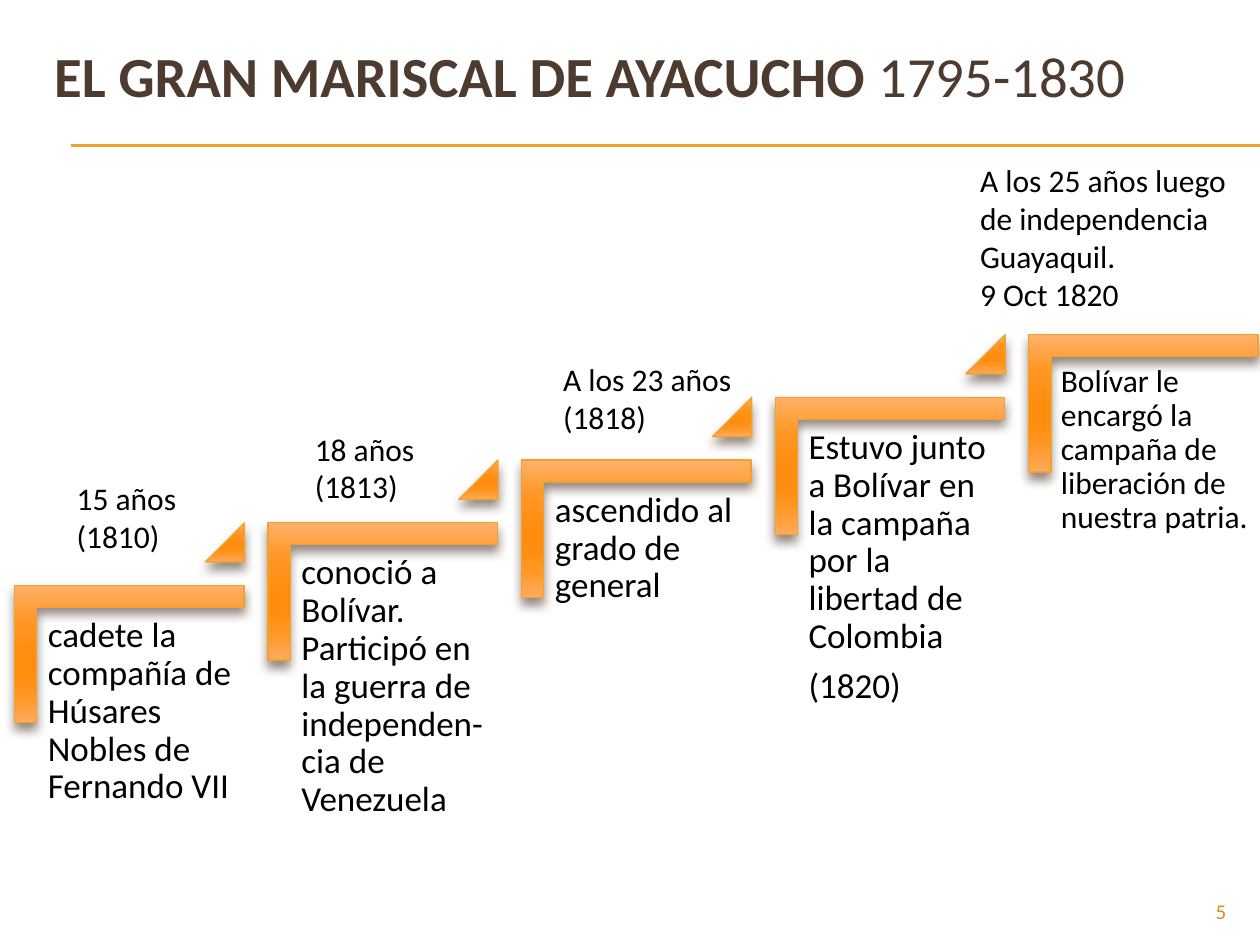
from lxml import etree
from pptx import Presentation
from pptx import util as u
from pptx.dml.color import RGBColor
from pptx.enum import shapes, text
from pptx.oxml import parse_xml
from pptx.oxml.ns import qn

W, H = 10, 7.5
INK = {"title": "4E3B30", "body": "000000", "rule": "F0A22E", "page": "D48F29"}
GRAD = [(0, "FFB16A"), (25, "FF9826"), (50, "FF8D0F"),
        (65, "FF8D0F"), (80, "FF9724"), (100, "FFAA5C")]
TITLE = [("EL GRAN MARISCAL DE AYACUCHO ", True), ("1795-1830", False)]
STEPS = [
    (["cadete la compañía de Húsares Nobles de Fernando VII"], 20, 0.08),
    (["conoció a Bolívar. Participó en la guerra de independen-cia de Venezuela"], 20, 0.08),
    (["ascendido al grado de general"], 20, 0.08),
    (["Estuvo junto a Bolívar en la campaña por la libertad de Colombia", "(1820)"], 20, 0.08),
    (["Bolívar le encargó la campaña de liberación de nuestra patria."], 18, 0.07),
]
DATES = [
    (["15 años", "(1810)"], (0.51, 3.75, 1, 0.71), False),
    (["18 años", "(1813)"], (2.4, 3.36, 1, 0.71), False),
    (["A los 23 años", "(1818)"], (4.37, 2.81, 1.55, 0.71), False),
    (["A los 25 años luego", "de independencia", "Guayaquil.", "9 Oct 1820"],
     (7.68, 1.23, 2.57, 1.31), True),
]
DX, DY = (8.35 - 0.3) / 4, (2.83 - 4.82) / 4
NS = 'xmlns:a="http://schemas.openxmlformats.org/drawingml/2006/main"'

deck = Presentation()
deck.slide_width, deck.slide_height = u.Inches(W), u.Inches(H)
slide = deck.slides.add_slide(deck.slide_layouts[5])


def inch(*nums):
    return [u.Inches(n) for n in nums]


def write(box, paras, size, ink="body", align="LEFT", wrap=True, pad=None, space=None, after=0):
    frame = box.text_frame
    frame.word_wrap = wrap
    if pad is not None:
        frame.margin_left = frame.margin_right = u.Inches(pad)
        frame.margin_top = frame.margin_bottom = u.Inches(pad)
    for n, runs in enumerate(paras):
        para = frame.add_paragraph() if n else frame.paragraphs[0]
        para.alignment = getattr(text.PP_ALIGN, align)
        para.space_after = u.Pt(after)
        if space:
            para.line_spacing = space
        for words, bold in [(runs, False)] if isinstance(runs, str) else runs:
            run = para.add_run()
            run.text = words
            font = run.font
            font.name, font.size, font.bold = "Calibri", u.Pt(size), bold
            font.color.rgb = RGBColor.from_string(INK[ink])
    return frame


def label(paras, spot, size, **style):
    return write(slide.shapes.add_textbox(*inch(*spot)), paras, size, **style)


def glow(kind, spot, adjust, turn=0):
    item = slide.shapes.add_shape(kind, *inch(*spot))
    item.rotation = turn
    for n, share in enumerate(adjust):
        item.adjustments[n] = share
    item.line.color.rgb = RGBColor.from_string(INK["rule"])
    item.line.width = u.Pt(0.79)
    stops = "".join(f'<a:gs pos="{pos * 1000}"><a:srgbClr val="{ink}"/></a:gs>'
                    for pos, ink in GRAD)
    props = item._element.spPr
    props.find(qn("a:ln")).addprevious(parse_xml(
        f'<a:gradFill {NS} rotWithShape="0"><a:gsLst>{stops}</a:gsLst>'
        '<a:lin ang="5400000" scaled="0"/></a:gradFill>'))
    props.append(parse_xml(
        f'<a:effectLst {NS}><a:outerShdw blurRad="{u.Pt(6)}" dist="{u.Pt(4)}" '
        'dir="5400000" rotWithShape="0">'
        f'<a:srgbClr val="{INK["title"]}"><a:alpha val="60000"/></a:srgbClr>'
        '</a:outerShdw></a:effectLst>'))


for y in (1.15, 1.16):
    rule = slide.shapes.add_connector(shapes.MSO_CONNECTOR.STRAIGHT, *inch(0.56, y, W, y))
    rule.line.color.rgb = RGBColor.from_string(INK["rule"])
    rule.line.width = u.Pt(0.75)
    etree.SubElement(rule._element.spPr, qn("a:effectLst"))

head = slide.shapes.title
head.left, head.top, head.width, head.height = inch(0.33, 0.5, 9.5, 0.92)
frame = write(head, [TITLE], 32.4, ink="title")
frame.auto_size = text.MSO_AUTO_SIZE.NONE
frame.vertical_anchor = text.MSO_ANCHOR.MIDDLE
frame.paragraphs[0].add_line_break()

for n, (paras, size, pad) in enumerate(STEPS):
    x, y = 0.3 + n * DX, 4.82 + n * DY
    glow(shapes.MSO_SHAPE.CORNER, (x + 0.18, y - 0.54, 1.09, 1.82), (0.161, 0.161), 90)
    label(paras, (x, y, 1.64, 1.44), size, pad=pad, space=0.9, after=size * 0.35)
    if n < len(STEPS) - 1:
        glow(shapes.MSO_SHAPE.ISOSCELES_TRIANGLE, (x + 1.33, y - 0.67, 0.31, 0.31), (1,))

for paras, spot, wrap in DATES:
    label(paras, spot, 18, wrap=wrap).auto_size = text.MSO_AUTO_SIZE.SHAPE_TO_FIT_TEXT

label(["5"], (9, 7.08, 0.83, 0.27), 12, ink="page", align="RIGHT")
deck.save("out.pptx")
